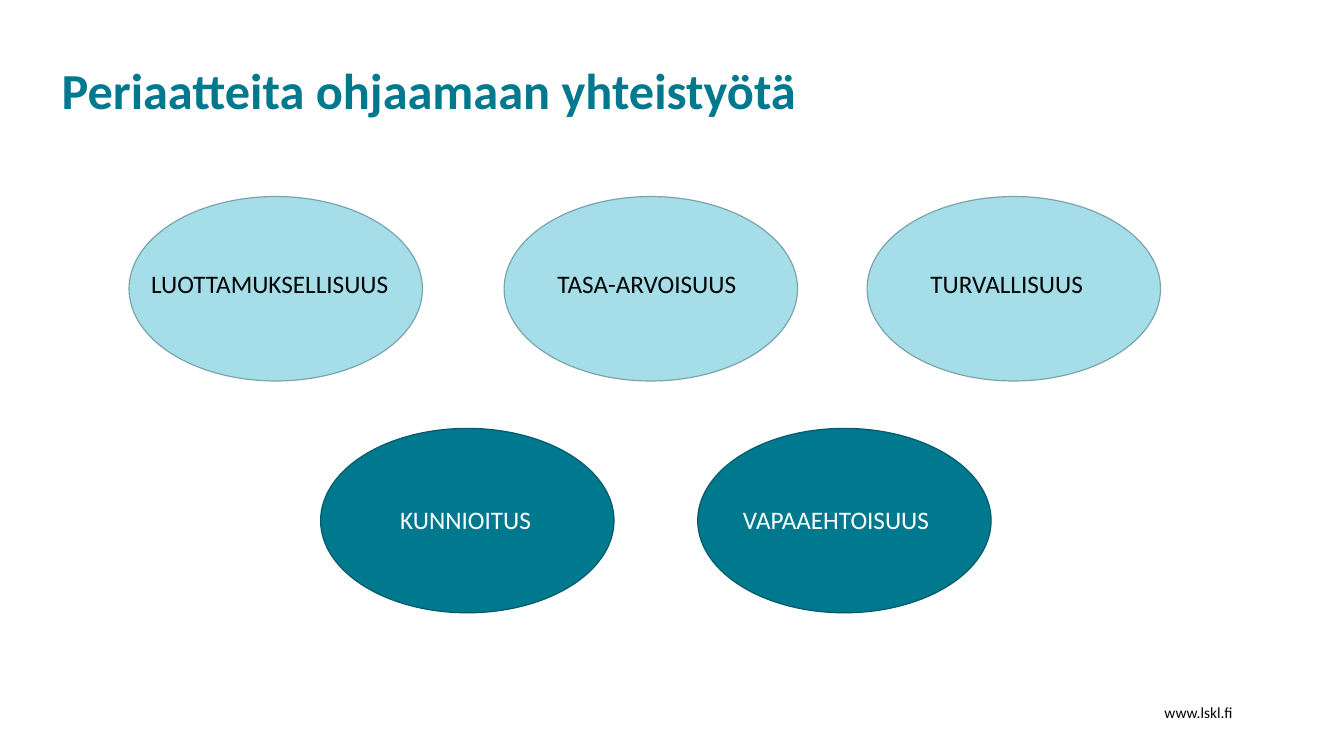
from pptx import Presentation
from pptx.dml.color import RGBColor
from pptx.enum.shapes import MSO_SHAPE
from pptx.enum.text import MSO_ANCHOR, MSO_AUTO_SIZE, PP_ALIGN
from pptx.util import Inches, Pt

COLORS = {
    "teal": "00798F", "teal_edge": "005A6A",
    "sky": "A5DEE9", "sky_edge": "7AA4AC",
    "ink": "030303", "white": "FFFFFF",
}
FONT = "Calibri"
OVAL_WIDTH, OVAL_HEIGHT = 2.91, 1.83
LABEL_HEIGHT = 0.4


def color(name):
    return RGBColor.from_string(COLORS[name])


def write(shape, text, size, color_name, bold=False, margin=None):
    frame = shape.text_frame
    frame.text = text
    if margin is not None:
        frame.margin_left = frame.margin_right = Inches(margin)
        frame.margin_top = frame.margin_bottom = Inches(margin)
    paragraph = frame.paragraphs[0]
    paragraph.alignment = PP_ALIGN.LEFT
    paragraph.font.name = FONT
    paragraph.font.size = Pt(size)
    paragraph.font.bold = bold
    paragraph.font.color.rgb = color(color_name)
    return frame


presentation = Presentation()
presentation.slide_width = Inches(13.33)
presentation.slide_height = Inches(7.5)
slide = presentation.slides.add_slide(presentation.slide_layouts[5])

# Title
title = slide.shapes.title
title.left, title.top = Inches(0.57), Inches(0.3)
title.width, title.height = Inches(11.69), Inches(1.18)
title_frame = write(title, "Periaatteita ohjaamaan yhteistyötä", 36, "teal", True, 0.04)
title_frame.vertical_anchor = MSO_ANCHOR.MIDDLE
title_frame.auto_size = MSO_AUTO_SIZE.NONE

# Rows of principles: oval top, label top, fill, edge, text colour,
# then each principle with its oval left, label left and label width
rows = [
    (1.95, 2.61, "sky", "sky_edge", "ink", [
        ("LUOTTAMUKSELLISUUS", 1.28, 1.4, 2.69),
        ("TASA-ARVOISUUS", 5, 5.43, 2.26),
        ("TURVALLISUUS", 8.6, 9.13, 1.93),
    ]),
    (4.25, 4.95, "teal", "teal_edge", "white", [
        ("KUNNIOITUS", 3.18, 3.87, 1.68),
        ("VAPAAEHTOISUUS", 6.92, 7.27, 2.2),
    ]),
]
for oval_top, label_top, fill, edge, text_color, principles in rows:
    for principle, oval_left, label_left, label_width in principles:
        oval = slide.shapes.add_shape(
            MSO_SHAPE.OVAL, Inches(oval_left), Inches(oval_top),
            Inches(OVAL_WIDTH), Inches(OVAL_HEIGHT))
        oval.shadow.inherit = False
        oval.fill.solid()
        oval.fill.fore_color.rgb = color(fill)
        oval.line.color.rgb = color(edge)
        oval.line.width = Pt(0.85)

        label = slide.shapes.add_textbox(
            Inches(label_left), Inches(label_top),
            Inches(label_width), Inches(LABEL_HEIGHT))
        write(label, principle, 18, text_color).word_wrap = True

# Web address
footer = slide.shapes.add_textbox(Inches(11.51), Inches(6.94), Inches(0.77), Inches(0.26))
footer_frame = write(footer, "www.lskl.fi", 11, "ink", margin=0.04)
footer_frame.vertical_anchor = MSO_ANCHOR.BOTTOM
footer_frame.word_wrap = False

presentation.save("out.pptx")
